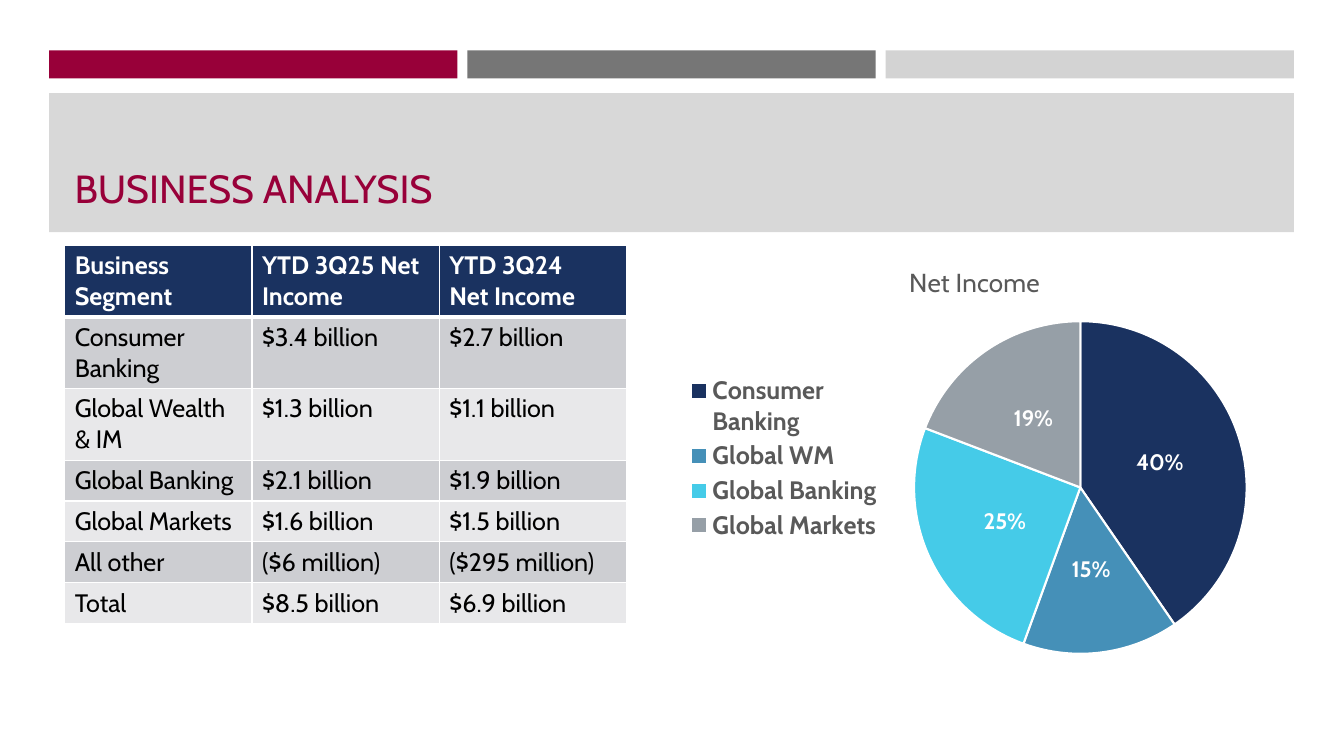
import pptx
import pptx.chart.data
import pptx.dml.color
import pptx.enum.chart
import pptx.enum.shapes
import pptx.enum.text
import pptx.oxml
import pptx.oxml.ns
import pptx.util
from pptx.util import Cm, Pt

TITLE = "BUSINESS ANALYSIS"
ROWS = [
    ("Business Segment", "YTD 3Q25 Net Income", "YTD 3Q24\nNet Income"),
    ("Consumer Banking", "$3.4 billion", "$2.7 billion"),
    ("Global Wealth & IM", "$1.3 billion", "$1.1 billion"),
    ("Global Banking", "$2.1 billion", "$1.9 billion"),
    ("Global Markets", "$1.6 billion", "$1.5 billion"),
    ("All other", "($6 million)", "($295 million)"),
    ("Total", "$8.5 billion", "$6.9 billion"),
]
CHART_TITLE = "Net Income"
SLICES = [
    ("Consumer Banking", 0.40, "navy"),
    ("Global WM", 0.15, "blue"),
    ("Global Banking", 0.25, "cyan"),
    ("Global Markets", 0.19, "slate"),
]
COLORS = {
    "crimson": "980039", "gray": "767676", "silver": "D3D3D3", "band": "D8D8D8",
    "navy": "1A3260", "blue": "4590B8", "cyan": "45CBE8", "slate": "969FA7",
    "odd": "CDCED2", "even": "E8E8EA", "white": "FFFFFF", "black": "000000",
    "label": "595959",
}
FONT = "Cabin"
LEFT, BAR_W, BAR_STEP = 1.24, 10.29, 10.54


def rgb(name):
    """Return the named palette colour."""
    return pptx.dml.color.RGBColor.from_string(COLORS[name])


def style(font, size, color, bold=False):
    """Set the face, size, colour and weight of a font."""
    font.name, font.size, font.bold = FONT, Pt(size), bold
    font.color.rgb = rgb(color)


def add_bar(s, x, y, w, h, color):
    """Draw a plain filled rectangle."""
    bar = s.shapes.add_shape(pptx.enum.shapes.MSO_SHAPE.RECTANGLE, Cm(x), Cm(y), Cm(w), Cm(h))
    bar.shadow.inherit = False
    bar.fill.solid()
    bar.fill.fore_color.rgb = rgb(color)
    bar.line.fill.background()


def set_borders(cell, top, bottom):
    """Give a cell white borders, with top and bottom widths in points."""
    props = cell._tc.get_or_add_tcPr()
    for i, (side, width) in enumerate((("L", 1), ("R", 1), ("T", top), ("B", bottom))):
        props.insert(i, pptx.oxml.parse_xml(
            f'<a:ln{side} {pptx.oxml.ns.nsdecls("a")} w="{Pt(width)}"><a:solidFill>'
            f'<a:srgbClr val="{COLORS["white"]}"/></a:solidFill></a:ln{side}>'))


def add_title(s):
    """Place the slide title at the foot of its band."""
    tf = s.shapes.add_textbox(Cm(1.63), Cm(2.72), Cm(30.63), Cm(2.74)).text_frame
    tf.word_wrap = True
    tf.vertical_anchor = pptx.enum.text.MSO_ANCHOR.BOTTOM
    p = tf.paragraphs[0]
    p.text = TITLE
    p.line_spacing = 0.9
    style(p.font, 28, "crimson")


def add_income_table(s):
    """Build the table of net income by segment."""
    row_h, col_w = 1.03, 4.72
    table = s.shapes.add_table(len(ROWS), len(ROWS[0]), Cm(1.63), Cm(6.18),
                               Cm(col_w * len(ROWS[0])), Cm(row_h * len(ROWS))).table
    for column in table.columns:
        column.width = Cm(col_w)
    for i, values in enumerate(ROWS):
        table.rows[i].height = Cm(row_h)
        fill = "navy" if i == 0 else "odd" if i % 2 else "even"
        for j, value in enumerate(values):
            cell = table.cell(i, j)
            cell.text = value
            cell.fill.solid()
            cell.fill.fore_color.rgb = rgb(fill)
            set_borders(cell, 3 if i == 1 else 1, 3 if i == 0 else 1)
            for p in cell.text_frame.paragraphs:
                style(p.font, 18, "black" if i else "white", i == 0)


def set_layout(parent, index, x, y, w, h, inner=False):
    """Fix a chart part at fractions of the chart area."""
    for old in parent.findall(pptx.oxml.ns.qn("c:layout")):
        parent.remove(old)
    target = '<c:layoutTarget val="inner"/>' if inner else ""
    sizes = "".join(f'<c:{tag} val="{v}"/>' for tag, v in zip("xywh", (x, y, w, h)))
    parent.insert(index, pptx.oxml.parse_xml(
        f'<c:layout {pptx.oxml.ns.nsdecls("c")}><c:manualLayout>{target}'
        f'<c:xMode val="edge"/><c:yMode val="edge"/>{sizes}</c:manualLayout></c:layout>'))


def add_income_chart(s):
    """Build the pie chart of net income shares."""
    data = pptx.chart.data.CategoryChartData(number_format="0%")
    data.categories = [name for name, _, _ in SLICES]
    data.add_series(CHART_TITLE, [value for _, value, _ in SLICES])
    chart = s.shapes.add_chart(pptx.enum.chart.XL_CHART_TYPE.PIE, Cm(16.94), Cm(6.18),
                               Cm(15.24), Cm(10.62), data).chart
    style(chart.font, 10, "black")
    chart.has_title = True
    p = chart.chart_title.text_frame.paragraphs[0]
    p.text = CHART_TITLE
    style(p.font, 18.6, "label")
    chart.chart_title.include_in_layout = False

    chart.has_legend = True
    legend = chart.legend
    legend.position = pptx.enum.chart.XL_LEGEND_POSITION.LEFT
    legend.include_in_layout = False
    style(legend.font, 18, "label", True)
    set_layout(legend._element, 1, 0.02, 0.3, 0.33, 0.41)

    plot = chart.plots[0]
    plot.vary_by_categories = True
    set_layout(chart._chartSpace.chart.plotArea, 0, 0.4, 0.18, 0.55, 0.79, True)
    for i, (_, _, color) in enumerate(SLICES):
        fmt = plot.series[0].points[i].format
        fmt.fill.solid()
        fmt.fill.fore_color.rgb = rgb(color)
        fmt.line.color.rgb = rgb("white")
        fmt.line.width = Pt(1.5)
    labels = plot.series[0].data_labels
    labels.show_value = True
    labels.show_percentage = False
    labels.number_format = "0%"
    labels.number_format_is_linked = False
    labels.position = pptx.enum.chart.XL_LABEL_POSITION.CENTER
    style(labels.font, 16, "white", True)


def main():
    """Build and save the business analysis slide."""
    prs = pptx.Presentation()
    prs.slide_width, prs.slide_height = Cm(33.87), Cm(19.05)
    s = prs.slides.add_slide(prs.slide_layouts[6])
    for i, color in enumerate(("crimson", "gray", "silver")):
        add_bar(s, LEFT + i * BAR_STEP, 1.27, BAR_W, 0.71, color)
    add_bar(s, LEFT, 2.35, 2 * BAR_STEP + BAR_W, 3.5, "band")
    add_income_table(s)
    add_title(s)
    add_income_chart(s)
    prs.save("out.pptx")


if __name__ == "__main__":
    main()
